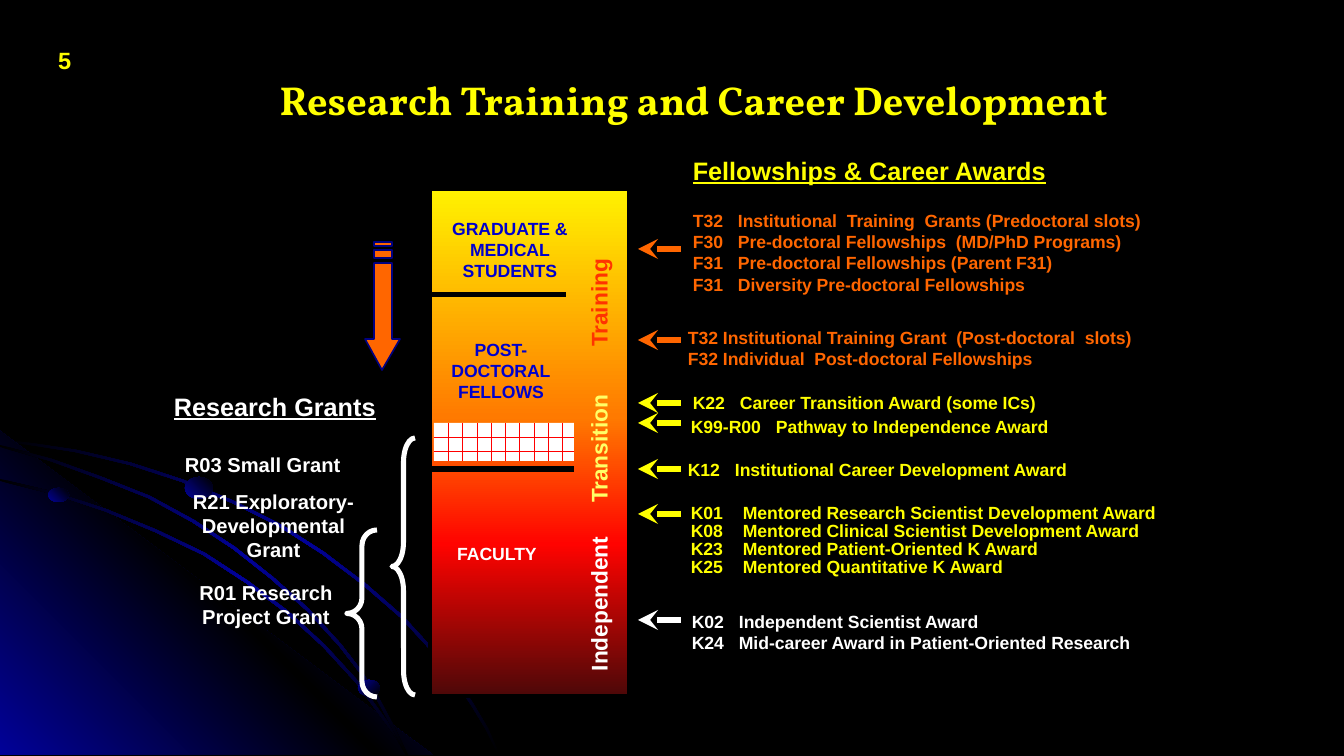
from pptx import Presentation
from pptx.dml.color import RGBColor
from pptx.enum import dml, shapes, text
from pptx.oxml import ns, parse_xml
from pptx.util import Pt

PX = 914400 / 121
C = {"black": "000000", "blue": "010199", "navy": "000080", "label": "0000CC",
     "white": "FFFFFF", "yellow": "FFFF00", "pale": "FFFF66",
     "orange": "FF6600", "red": "FF0000", "scarlet": "FF3300",
     "top": "FFF200", "amber": "FF7A00", "flame": "FF0300", "maroon": "4D0808"}
GLOW = [(0, "black"), (50, "blue"), (100, "black")]
ARCS = [
    [(0, 439), (38, 444), (77, 450), (132, 463), (184, 480), (234, 501),
     (282, 525), (324, 552), (365, 583), (403, 616), (437, 653), (456, 678),
     (473, 703), (488, 728), (500, 755)],
    [(0, 479), (54, 492), (106, 509), (157, 530), (205, 553), (248, 581),
     (288, 611), (325, 645), (358, 681), (385, 718), (398, 736), (408, 755)],
    [(0, 445), (52, 459), (102, 477), (150, 496), (194, 520), (235, 547),
     (273, 577), (309, 609), (341, 644), (361, 670), (379, 698), (394, 726),
     (408, 755)],
]
ARROWS = [(249, "orange"), (340, "orange"), (403, "yellow"), (423, "yellow"),
          (469, "yellow"), (514, "yellow"), (620, "white")]
AWARDS = [
    (681, 204, 45, "orange", 1, [
        "T32\tInstitutional  Training  Grants (Predoctoral slots)",
        "F30\tPre-doctoral Fellowships  (MD/PhD Programs)",
        "F31\tPre-doctoral Fellowships (Parent F31)",
        "F31\tDiversity Pre-doctoral Fellowships"]),
    (676, 321, 0, "orange", 1, [
        "T32 Institutional Training Grant  (Post-doctoral  slots)",
        "F32 Individual  Post-doctoral Fellowships"]),
    (681, 389, 47, "yellow", 0.85, ["K22\tCareer Transition Award (some ICs)"]),
    (679, 413, 85, "yellow", 0.85, ["K99-R00\tPathway to Independence Award"]),
    (676, 456, 47, "yellow", 0.85, ["K12\tInstitutional Career Development Award"]),
    (679, 499, 52, "yellow", 0.85, [
        "K01\tMentored Research Scientist Development Award",
        "K08\tMentored Clinical Scientist Development Award",
        "K23\tMentored Patient-Oriented K Award",
        "K25\tMentored Quantitative K Award"]),
    (680, 605, 47, "white", 1, [
        "K02\tIndependent Scientist Award",
        "K24\tMid-career Award in Patient-Oriented Research"]),
]


def px(*values):
    """Turn px lengths into EMU."""
    return [round(v * PX) for v in values]


def rgb(name):
    """Look up a named colour."""
    return RGBColor.from_string(C[name])


def paint(sp, stops=None, angle=0, fill=None, line=None, width=1):
    """Give a shape its fill and outline."""
    sp.shadow.inherit = False
    sp.fill.background()
    if stops:
        gs = "".join(f'<a:gs pos="{pos * 1000}"><a:srgbClr val="{C[c]}"/></a:gs>'
                     for pos, c in stops)
        grad = parse_xml(f'<a:gradFill {ns.nsdecls("a")} rotWithShape="1">'
                         f'<a:gsLst>{gs}</a:gsLst>'
                         f'<a:lin ang="{angle * 60000}" scaled="0"/></a:gradFill>')
        pr = sp._element.spPr
        pr.replace(pr.find(ns.qn("a:noFill")), grad)
    elif fill:
        sp.fill.solid()
        sp.fill.fore_color.rgb = rgb(fill)
    if line:
        sp.line.color.rgb = rgb(line)
        sp.line.width = Pt(width)
    else:
        sp.line.fill.background()


def preset(slide, kind, box, **look):
    """Add a painted preset shape."""
    sp = slide.shapes.add_shape(kind, *px(*box))
    paint(sp, **look)
    return sp


def outline(slide, contours, **look):
    """Add a painted freeform of closed contours."""
    builder = slide.shapes.build_freeform(*contours[0][0], scale=PX)
    for i, points in enumerate(contours):
        if i:
            builder.move_to(*points[0])
        builder.add_line_segments(points[1:], close=True)
    paint(builder.convert_to_shape(), **look)


def arc(slide, edge):
    """Add a thin glowing band below an edge."""
    lower = [(max(0, x - 2), min(755, y + 2)) for x, y in reversed(edge)]
    outline(slide, [edge + lower], stops=GLOW, angle=45)


def rule(slide, x1, x2, y, color, width, head=False):
    """Add a level line, with an arrowhead if asked."""
    sp = slide.shapes.add_connector(shapes.MSO_CONNECTOR.STRAIGHT, *px(x1, y, x2, y))
    sp.line.color.rgb = rgb(color)
    sp.line.width = Pt(width)
    if head:
        sp.line._get_or_add_ln().append(
            parse_xml(f'<a:tailEnd {ns.nsdecls("a")} type="stealth"/>'))
    sp._element.spPr.append(parse_xml(f'<a:effectLst {ns.nsdecls("a")}/>'))


def label(slide, box, lines, size, color, align="LEFT", wrap=True, turn=0,
          spacing=1, tab=0, font="Arial", underline=False, anchor="TOP"):
    """Add a text box of bold paragraphs."""
    sp = slide.shapes.add_textbox(*px(*box))
    sp.rotation = turn
    tf = sp.text_frame
    tf.word_wrap = wrap
    tf.vertical_anchor = text.MSO_ANCHOR[anchor]
    style = {"name": font, "size": Pt(size), "bold": True, "underline": underline}
    for i, line in enumerate(lines):
        p = tf.add_paragraph() if i else tf.paragraphs[0]
        p.alignment = text.PP_ALIGN[align]
        p.line_spacing = spacing
        if tab:
            p._p.get_or_add_pPr().append(parse_xml(
                f'<a:tabLst {ns.nsdecls("a")}><a:tab pos="{px(tab)[0]}" algn="l"/></a:tabLst>'))
        r = p.add_run()
        r.text = line
        for key, value in style.items():
            setattr(r.font, key, value)
        r.font.color.rgb = rgb(color)


def backdrop(slide):
    """Draw the black ground with its blue glow."""
    slide.background.fill.solid()
    slide.background.fill.fore_color.rgb = rgb("black")
    arc(slide, ARCS[0])
    outline(slide, [[(433, 755), (0, 755), (0, 431)]], angle=315,
            stops=[(0, "blue"), (50, "black"), (100, "blue")])
    for edge in ARCS[1:]:
        arc(slide, edge)
    for box, angle in [((48, 488, 21, 14), 315), ((358, 680, 22, 16), 45),
                       ((185, 477, 28, 22), 315)]:
        preset(slide, shapes.MSO_SHAPE.OVAL, box, angle=angle,
               stops=[(0, "blue"), (100, "black")])


def career_column(slide):
    """Draw the career stages column."""
    rect = shapes.MSO_SHAPE.RECTANGLE
    preset(slide, rect, (430, 189, 199, 507), angle=90, line="black", width=2,
           stops=[(0, "top"), (45, "amber"), (70, "flame"), (100, "maroon")])
    rule(slide, 566, 430, 295, "black", 3)
    rule(slide, 574, 430, 469, "black", 3)
    bricks = preset(slide, rect, (434, 423, 140, 38))
    bricks.fill.patterned()
    bricks.fill.pattern = dml.MSO_PATTERN.HORIZONTAL_BRICK
    bricks.fill.fore_color.rgb = rgb("red")
    bricks.fill.back_color.rgb = rgb("white")
    for box, lines, color in [
            ((438, 212, 144, 76), ["GRADUATE &", "MEDICAL", "STUDENTS"], "label"),
            ((438, 333, 126, 76), ["POST-", "DOCTORAL", "FELLOWS"], "label"),
            ((443, 537, 108, 34), ["FACULTY"], "white")]:
        label(slide, box, lines, 10.5, color, "CENTER", wrap=False)
    for word, middle, color in [("Training", 303, "scarlet"),
                                ("Transition", 449, "pale"),
                                ("Independent", 604, "white")]:
        label(slide, (509, middle - 20, 180, 40), [word], 13.5, color, "CENTER", turn=270)


def research_grants(slide):
    """Draw the grants on the left with their braces."""
    label(slide, (162, 385, 261, 42), ["Research Grants"], 15, "white", underline=True)
    label(slide, (173, 446, 186, 36), ["R03 Small Grant"], 12, "white")
    label(slide, (162, 483, 223, 86), ["R21 Exploratory-", "Developmental", "Grant"],
          12, "white", "CENTER")
    label(slide, (179, 574, 174, 60), ["R01 Research Project Grant"], 12, "white", "CENTER")
    for box, curl in [((347, 530, 30, 167), 0.52), ((392, 438, 23, 257), 1.06)]:
        sp = preset(slide, shapes.MSO_SHAPE.LEFT_BRACE, box, line="white", width=3)
        sp.adjustments[0] = curl
    stripes = [[(374, y), (392, y), (392, y + h), (374, y + h)]
               for y, h in [(250, 8), (242, 4)]]
    arrow = [(400, 339), (392, 339), (392, 263), (374, 263), (374, 339), (365, 339), (382, 370)]
    outline(slide, [arrow] + stripes, fill="orange", line="navy")


def career_awards(slide):
    """Draw the awards on the right with their arrows."""
    label(slide, (681, 149, 381, 42), ["Fellowships & Career Awards"], 15, "yellow",
          underline=True)
    for y, color in ARROWS:
        rule(slide, 681, 638, y, color, 4, head=True)
    for x, y, tab, color, spacing, lines in AWARDS:
        label(slide, (x, y, 560, 12 + 21 * len(lines)), lines, 10.5, color,
              spacing=spacing, tab=tab)


def main():
    """Build the slide and save it."""
    prs = Presentation()
    prs.slide_width, prs.slide_height = px(1344, 756)
    slide = prs.slides.add_slide(prs.slide_layouts[6])
    backdrop(slide)
    label(slide, (219, 61, 949, 77), ["Research Training and Career Development"],
          24, "yellow", "CENTER", font="Vollkorn", anchor="MIDDLE")
    label(slide, (29, 40, 54, 40), ["5"], 14, "yellow", "RIGHT")
    career_column(slide)
    research_grants(slide)
    career_awards(slide)
    prs.save("out.pptx")


if __name__ == "__main__":
    main()
